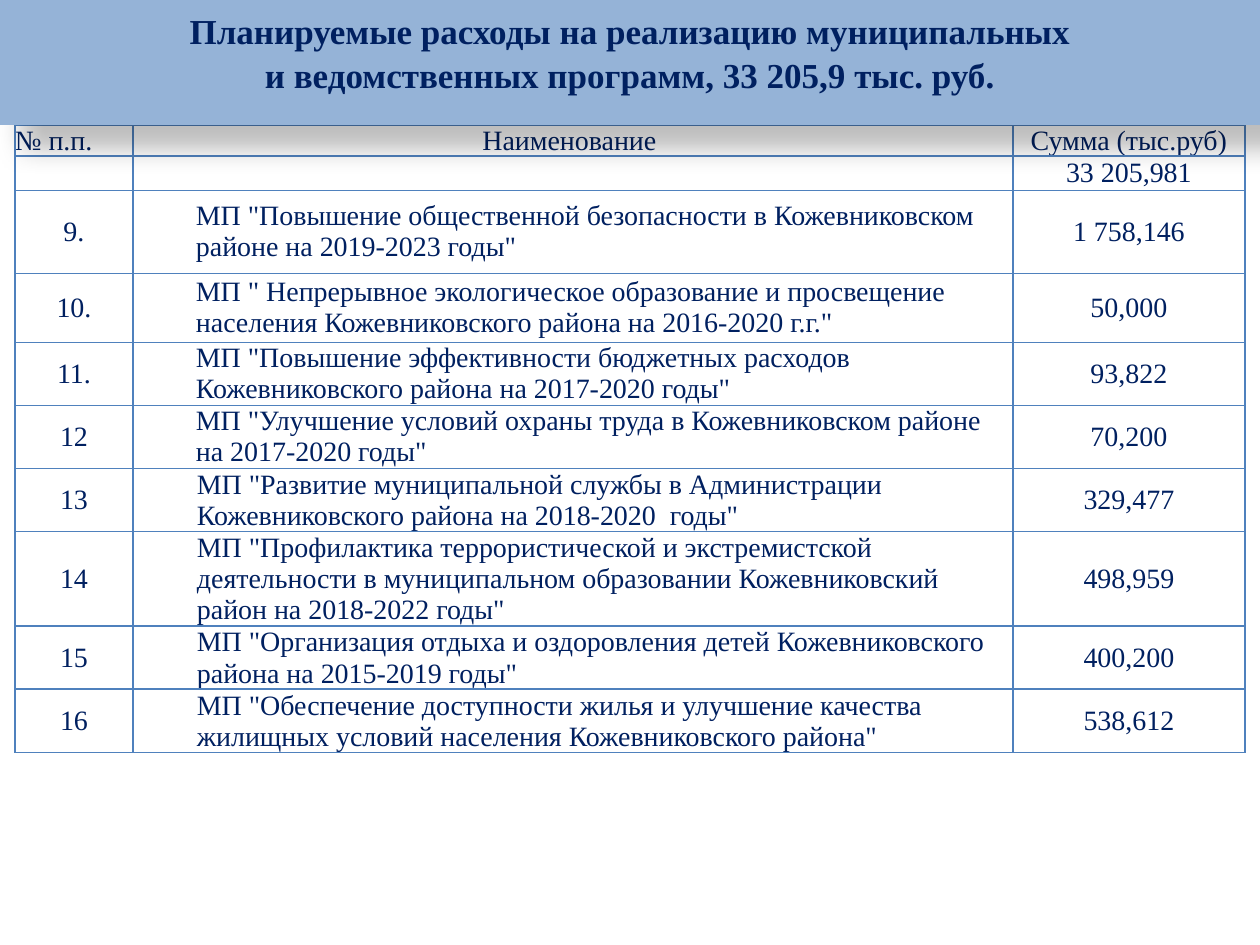
"""Builds a slide with a table of planned municipal programme spending."""
from dataclasses import dataclass

from lxml import etree
from pptx import Presentation
from pptx.dml.color import RGBColor
from pptx.enum.shapes import MSO_SHAPE
from pptx.enum.text import MSO_ANCHOR, PP_ALIGN
from pptx.oxml.ns import qn
from pptx.util import Pt

LEFT, CENTER = PP_ALIGN.LEFT, PP_ALIGN.CENTER
TOP, MIDDLE = MSO_ANCHOR.TOP, MSO_ANCHOR.MIDDLE
RECTANGLE = MSO_SHAPE.RECTANGLE
PX = 914400 // 126


@dataclass(frozen=True)
class Theme:
    font: str = "Times New Roman"
    ink: str = "002060"
    banner: str = "95B3D7"
    border: str = "4F81BD"
    shadow: str = "000000"
    title_size: int = 20
    table_size: int = 16


THEME = Theme()
TITLE = (
    "Планируемые расходы на реализацию муниципальных",
    " и ведомственных программ, 33 205,9 тыс. руб. ",
)
HEADINGS = [
    (31, "№ п.п.", "Наименование ", "Сумма (тыс.руб)"),
    (32, "", "", "33 205,981"),
]
PROGRAMMES = [
    (83, "9.", "МП \"Повышение общественной безопасности в Кожевниковском районе на 2019-2023 годы\"", "1 758,146"),
    (69, "10.", "МП \" Непрерывное экологическое образование и просвещение населения Кожевниковского района на 2016-2020 г.г.\"", "50,000"),
    (63, "11.", "МП \"Повышение эффективности бюджетных расходов Кожевниковского района на 2017-2020 годы\"", "93,822"),
    (63, "12", "МП \"Улучшение условий охраны труда в Кожевниковском районе на 2017-2020 годы\"", "70,200"),
    (63, "13", "МП \"Развитие муниципальной службы в Администрации Кожевниковского района на 2018-2020  годы\"", "329,477"),
    (94, "14", "МП \"Профилактика террористической и экстремистской деятельности в муниципальном образовании Кожевниковский район на 2018-2022 годы\"", "498,959"),
    (63, "15", "МП \"Организация отдыха и оздоровления детей Кожевниковского района на 2015-2019 годы\"", "400,200"),
    (63, "16", "МП \"Обеспечение доступности жилья и улучшение качества жилищных условий населения Кожевниковского района\"", "538,612"),
]
COLUMN_WIDTHS = (118, 880, 232)
SLIDE_WIDTH, SLIDE_HEIGHT = 1260, 945
BANNER_HEIGHT = 125
TABLE_LEFT = 15
NAME_COLUMN = 1
NAME_INDENT = 63
FIRST_INSET_ROW = 6


def style_paragraph(paragraph, size, bold, align):
    paragraph.alignment = align
    for run in paragraph.runs:
        run.font.name = THEME.font
        run.font.size = Pt(size)
        run.font.bold = bold
        run.font.color.rgb = RGBColor.from_string(THEME.ink)


def add_color(parent, value):
    fill = etree.SubElement(parent, qn("a:solidFill"))
    etree.SubElement(fill, qn("a:srgbClr"), val=value)


def style_cell(cell, inset):
    cell.vertical_anchor = MIDDLE
    cell.margin_left = cell.margin_right = cell.margin_top = inset * PX
    cell.margin_bottom = 0
    properties = cell._tc.get_or_add_tcPr()
    for side in ("a:lnL", "a:lnR", "a:lnT", "a:lnB"):
        add_color(etree.SubElement(properties, qn(side), w=str(Pt(1))), THEME.border)
    cell.fill.background()


def fill_cell(cell, text, align, indented):
    cell.text_frame.text = text
    paragraph = cell.text_frame.paragraphs[0]
    style_paragraph(paragraph, THEME.table_size, False, align)
    if indented:
        paragraph.level = 1
        properties = paragraph._p.get_or_add_pPr()
        properties.set("marL", str(NAME_INDENT * PX))
        properties.set("indent", "0")
    if not text:
        etree.SubElement(paragraph._p, qn("a:endParaRPr"), sz=str(THEME.table_size * 100))


def add_spending_table(slide):
    rows = HEADINGS + PROGRAMMES
    table = slide.shapes.add_table(
        len(rows), len(COLUMN_WIDTHS), TABLE_LEFT * PX, BANNER_HEIGHT * PX,
        sum(COLUMN_WIDTHS) * PX, sum(row[0] for row in rows) * PX,
    ).table
    table.first_row = table.horz_banding = False
    for column, width in zip(table.columns, COLUMN_WIDTHS):
        column.width = width * PX
    for row_index, (height, *texts) in enumerate(rows):
        table.rows[row_index].height = height * PX
        for column_index, text in enumerate(texts):
            cell = table.cell(row_index, column_index)
            indented = row_index >= len(HEADINGS) and column_index == NAME_COLUMN
            first = row_index == column_index == 0
            style_cell(cell, int(row_index >= FIRST_INSET_ROW))
            fill_cell(cell, text, LEFT if indented or first else CENTER, indented)


def add_banner(slide):
    banner = slide.shapes.add_shape(RECTANGLE, 0, 0, SLIDE_WIDTH * PX, BANNER_HEIGHT * PX)
    banner.fill.solid()
    banner.fill.fore_color.rgb = RGBColor.from_string(THEME.banner)
    banner.line.fill.background()
    banner.shadow.inherit = False
    shadow = etree.SubElement(
        banner._element.spPr.find(qn("a:effectLst")), qn("a:outerShdw"),
        blurRad=str(Pt(15)), dist=str(Pt(18)), dir=str(45 * 60000),
        algn="tl", rotWithShape="0",
    )
    color = etree.SubElement(shadow, qn("a:srgbClr"), val=THEME.shadow)
    etree.SubElement(color, qn("a:alpha"), val="26000")
    frame = banner.text_frame
    frame.word_wrap = True
    frame.vertical_anchor = TOP
    frame.margin_top = 10 * PX
    frame.text = "\n".join(TITLE)
    for paragraph in frame.paragraphs:
        style_paragraph(paragraph, THEME.title_size, True, CENTER)
    frame.paragraphs[-1].space_before = Pt(1)


def main():
    deck = Presentation()
    deck.slide_width, deck.slide_height = SLIDE_WIDTH * PX, SLIDE_HEIGHT * PX
    slide = deck.slides.add_slide(deck.slide_layouts[6])
    add_spending_table(slide)
    add_banner(slide)
    deck.save("out.pptx")


if __name__ == "__main__":
    main()
